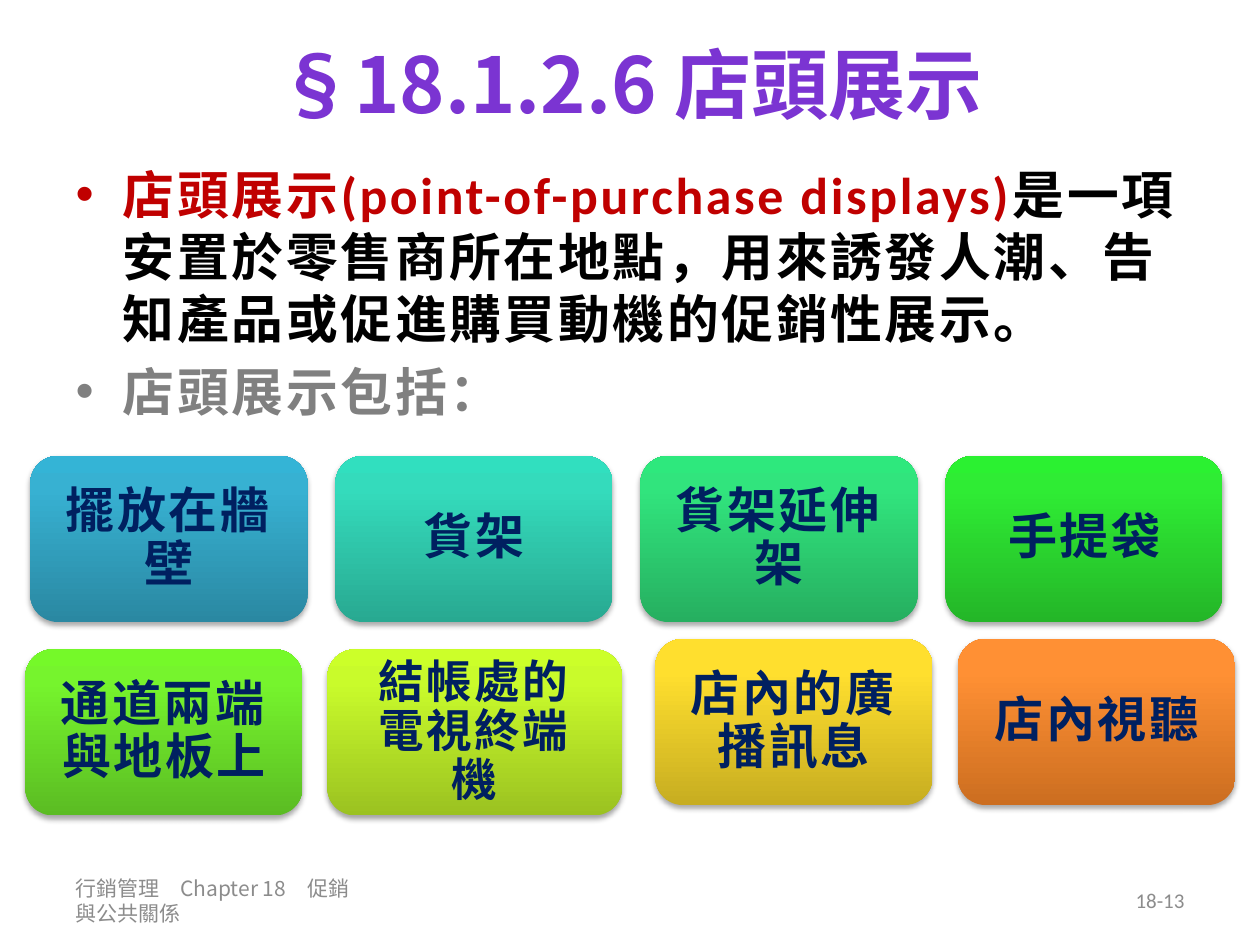
"""Build the slide on point-of-purchase displays."""
from copy import deepcopy

from lxml import etree
from pptx import Presentation
from pptx.dml.color import RGBColor
from pptx.enum.shapes import MSO_SHAPE
from pptx.enum.text import MSO_ANCHOR, MSO_AUTO_SIZE, PP_ALIGN
from pptx.oxml.ns import qn
from pptx.util import Cm, Pt

CENTER, LEFT, RIGHT = PP_ALIGN.CENTER, PP_ALIGN.LEFT, PP_ALIGN.RIGHT
MIDDLE = MSO_ANCHOR.MIDDLE
NO_AUTOFIT = MSO_AUTO_SIZE.NONE
ROUNDED = MSO_SHAPE.ROUNDED_RECTANGLE
LATIN, HAN = "Calibri", "Noto Sans CJK SC"
PURPLE, RED, BLACK, GRAY = "7B34D2", "C00000", "000000", "808080"
NAVY, FOOTER_GRAY = "002060", "8C8C8C"


def color(value):
    """Turn a hex string into a colour."""
    return RGBColor.from_string(value)


class DisplaySlide:
    """Hold the slide and the style of its elements."""

    def __init__(self, presentation):
        """Add a title and content slide."""
        self.slide = presentation.slides.add_slide(presentation.slide_layouts[1])

    def style(self, paragraph, name, size, hue=None, bold=False, spacing=0):
        """Set the font of a whole paragraph."""
        font = paragraph.font
        font.name, font.size, font.bold = name, Pt(size), bold
        if hue:
            font.color.rgb = color(hue)
        if spacing:
            properties = paragraph._p.get_or_add_pPr().get_or_add_defRPr()
            properties.set("spc", str(int(spacing * 100)))

    def place(self, shape, left, top, width, height):
        """Move and size a shape in centimetres."""
        shape.left, shape.top = Cm(left), Cm(top)
        shape.width, shape.height = Cm(width), Cm(height)

    def title(self, text):
        """Fill the title placeholder."""
        heading = self.slide.shapes.title
        self.place(heading, 1.27, 0, 22.86, 3.33)
        frame = heading.text_frame
        frame.text = text
        frame.auto_size, frame.vertical_anchor = NO_AUTOFIT, MIDDLE
        frame.paragraphs[0].alignment = CENTER
        self.style(frame.paragraphs[0], HAN, 44, PURPLE, True)

    def bullets(self, points):
        """Fill the body placeholder with points made of coloured runs."""
        body = self.slide.placeholders[1]
        self.place(body, 1.27, 3.15, 22.86, 6)
        frame = body.text_frame
        frame.auto_size = NO_AUTOFIT
        for index, point in enumerate(points):
            paragraph = frame.add_paragraph() if index else frame.paragraphs[0]
            paragraph.space_before = Pt(6 if index else 0)
            self.style(paragraph, LATIN, 29.6, bold=True, spacing=1.5)
            for text, hue in point:
                run = paragraph.add_run()
                run.text = text
                run.font.color.rgb = color(hue)

    def footer(self, text, left, width, name, alignment):
        """Add a small text at the foot of the slide."""
        box = self.slide.shapes.add_textbox(Cm(left), Cm(17.65), Cm(width), Cm(1.01))
        frame = box.text_frame
        frame.word_wrap, frame.vertical_anchor = True, MIDDLE
        frame.text = text
        frame.paragraphs[0].alignment = alignment
        self.style(frame.paragraphs[0], name, 12, FOOTER_GRAY)

    def card(self, text, left, top, shades, width=5.59, size=28):
        """Add a rounded card with a gradient and a soft shadow."""
        card = self.slide.shapes.add_shape(
            ROUNDED, Cm(left), Cm(top), Cm(width), Cm(3.35))
        card.line.fill.background()
        self.gradient(card, shades)
        self.shadow(card)
        frame = card.text_frame
        frame.word_wrap, frame.vertical_anchor = True, MIDDLE
        frame.margin_left = frame.margin_right = Cm(0.46)
        frame.margin_top = frame.margin_bottom = Cm(0.46)
        frame.text = text
        paragraph = frame.paragraphs[0]
        paragraph.alignment, paragraph.line_spacing = CENTER, 0.9
        self.style(paragraph, LATIN, size, NAVY, True, 1.5)

    def gradient(self, shape, shades):
        """Fill a shape from bottom to top with three shades."""
        shape.fill.gradient()
        shape.fill.gradient_angle = 90
        stops = shape._element.spPr.find(".//" + qn("a:gsLst"))
        stops.append(deepcopy(stops[-1]))
        for stop, position, shade in zip(
                shape.fill.gradient_stops, (0, 0.8, 1), shades):
            stop.position = position
            stop.color.rgb = color(shade)

    def shadow(self, shape):
        """Cast a soft shadow below a shape."""
        shape.shadow.inherit = False
        effects = shape._element.spPr.find(qn("a:effectLst"))
        outer = etree.SubElement(
            effects, qn("a:outerShdw"), blurRad=str(Pt(3.1)), dist=str(Pt(1.8)),
            dir="5400000", rotWithShape="0")
        black = etree.SubElement(outer, qn("a:srgbClr"), val=BLACK)
        etree.SubElement(black, qn("a:alpha"), val="35000")


def main():
    """Write the slide to a file."""
    presentation = Presentation()
    presentation.slide_width, presentation.slide_height = Cm(25.4), Cm(19.05)
    page = DisplaySlide(presentation)
    page.title("§18.1.2.6 店頭展示")
    page.bullets([
        [("店頭展示(point-of-purchase displays)", RED),
         ("是一項安置於零售商所在地點，用來誘發人潮、告知產品或促進購買動機的促銷性展示。", BLACK)],
        [("店頭展示包括：", GRAY)],
    ])
    upper_row = [
        ("擺放在牆壁", ("2A88A2", "37B1D2", "34B4D6")),
        ("貨架", ("28A991", "34DBBC", "31DFBF")),
        ("貨架延伸架", ("26AF60", "31E47D", "2EE87D")),
        ("手提袋", ("24B628", "2FEC34", "2BF131")),
    ]
    for column, (text, shades) in enumerate(upper_row):
        page.card(text, 0.61 + 6.15 * column, 9.19, shades)
    page.card("通道兩端與地板上", 0.51, 13.09, ("5BBC23", "76F42D", "75F929"))
    page.card("結帳處的電視終端機", 6.6, 13.09, ("9BC221", "C9FB2B", "CCFF29"), 5.94, 26)
    page.card("店內的廣播訊息", 13.21, 12.88, ("C7AD21", "FFDF2E", "FFDF2F"))
    page.card("店內視聽", 19.31, 12.88, ("CC6E20", "FF9034", "FF9136"))
    page.footer("行銷管理　Chapter 18　促銷與公共關係", 1.27, 6.22, HAN, LEFT)
    page.footer("18-13", 18.21, 5.92, LATIN, RIGHT)
    presentation.save("out.pptx")


if __name__ == "__main__":
    main()
